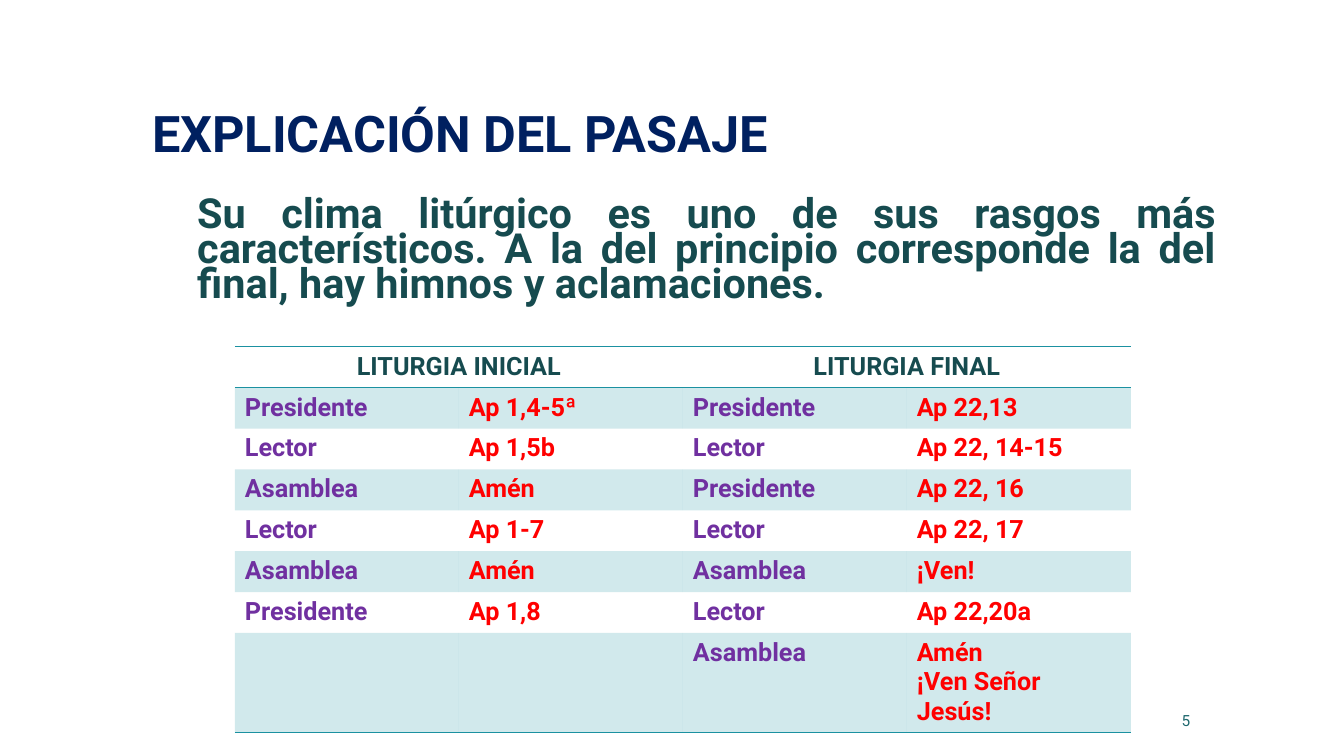
"""Build the slide comparing the opening and closing liturgies."""
from lxml.etree import SubElement
from pptx import Presentation
from pptx.dml.color import RGBColor
from pptx.enum.text import MSO_ANCHOR as Anchor, MSO_AUTO_SIZE as AutoSize, PP_ALIGN as Align
from pptx.oxml.ns import qn
from pptx.util import Cm, Pt

NAVY = RGBColor(0x00, 0x20, 0x60)
DARK_TEAL = RGBColor(0x16, 0x4B, 0x4F)
MID_TEAL = RGBColor(0x1F, 0x69, 0x6F)
TEAL = RGBColor(0x1B, 0x91, 0xA1)
PURPLE = RGBColor(0x70, 0x30, 0xA0)
RED = RGBColor(0xFF, 0x00, 0x00)
PLAIN_TABLE = "{2D5ABB26-0587-4C30-8999-92F81FD0307C}"

HEADINGS = ["LITURGIA INICIAL", "LITURGIA FINAL"]
RESPONSES = [
    ("Presidente", "Ap 1,4-5ª", "Presidente", "Ap 22,13"),
    ("Lector", "Ap 1,5b", "Lector", "Ap 22, 14-15"),
    ("Asamblea", "Amén", "Presidente", "Ap 22, 16"),
    ("Lector", "Ap 1-7", "Lector", "Ap 22, 17"),
    ("Asamblea", "Amén", "Asamblea", "¡Ven!"),
    ("Presidente", "Ap 1,8", "Lector", "Ap 22,20a"),
    ("", "", "Asamblea", "Amén\n¡Ven Señor Jesús!"),
]


def write(frame, text, size, color, bold=True, align=Align.LEFT, spacing=1.0, anchor=Anchor.TOP):
    frame.word_wrap = True
    frame.auto_size = AutoSize.NONE
    frame.vertical_anchor = anchor
    frame.text = text
    for para in frame.paragraphs:
        para.alignment = align
        para.line_spacing = spacing
        para.font.name = "Roboto"
        para.font.size = Pt(size)
        para.font.bold = bold
        para.font.color.rgb = color


def add_rule(cell, side):
    line = SubElement(cell._tc.get_or_add_tcPr(), qn(f"a:{side}"), w=str(Pt(1)))
    fill = SubElement(line, qn("a:solidFill"))
    SubElement(fill, qn("a:srgbClr"), val=str(TEAL))


deck = Presentation()
deck.slide_width, deck.slide_height = Cm(33.87), Cm(19.05)
page = deck.slides.add_slide(deck.slide_layouts[5])

title = page.shapes.title
title.left, title.top, title.width, title.height = Cm(3.58), Cm(1.07), Cm(26.67), Cm(3.18)
write(title.text_frame, "EXPLICACIÓN DEL PASAJE", 36, NAVY, spacing=0.9, anchor=Anchor.BOTTOM)

intro = page.shapes.add_textbox(Cm(4.72), Cm(4.93), Cm(26.21), Cm(3.2))
write(intro.text_frame,
      "Su clima litúrgico es uno de sus rasgos más característicos. "
      "A la del principio corresponde la del final, hay himnos y aclamaciones.",
      29.6, DARK_TEAL, align=Align.JUSTIFY, spacing=0.7)

table_frame = page.shapes.add_table(len(RESPONSES) + 1, 4, Cm(5.92), Cm(8.74), Cm(22.58), Cm(9.75))
table = table_frame.table
table.first_row = table.horz_banding = False
for style in table_frame.element.iter(qn("a:tableStyleId")):
    style.text = PLAIN_TABLE
for row in table.rows:
    row.height = Cm(1.03)
table.rows[len(RESPONSES)].height = Cm(2.5)

for column, heading in zip((0, 2), HEADINGS):
    cell = table.cell(0, column)
    cell.merge(table.cell(0, column + 1))
    write(cell.text_frame, heading, 18, DARK_TEAL, align=Align.CENTER)
    for part in (cell, table.cell(0, column + 1)):
        add_rule(part, "lnT")
        add_rule(part, "lnB")
        part.fill.background()

for index, responses in enumerate(RESPONSES, start=1):
    for column, text in enumerate(responses):
        cell = table.cell(index, column)
        write(cell.text_frame, text, 18, RED if column % 2 else PURPLE)
        if index == len(RESPONSES):
            add_rule(cell, "lnB")
        if index % 2:
            cell.fill.solid()
            cell.fill.fore_color.rgb = TEAL
            tint = cell._tc.tcPr.find(qn("a:solidFill")).find(qn("a:srgbClr"))
            SubElement(tint, qn("a:alpha"), val="20000")
        else:
            cell.fill.background()

number = page.shapes.add_textbox(Cm(22.35), Cm(17.65), Cm(7.9), Cm(1.02))
write(number.text_frame, "5", 11, MID_TEAL, bold=False, align=Align.RIGHT, anchor=Anchor.MIDDLE)

deck.save("out.pptx")
